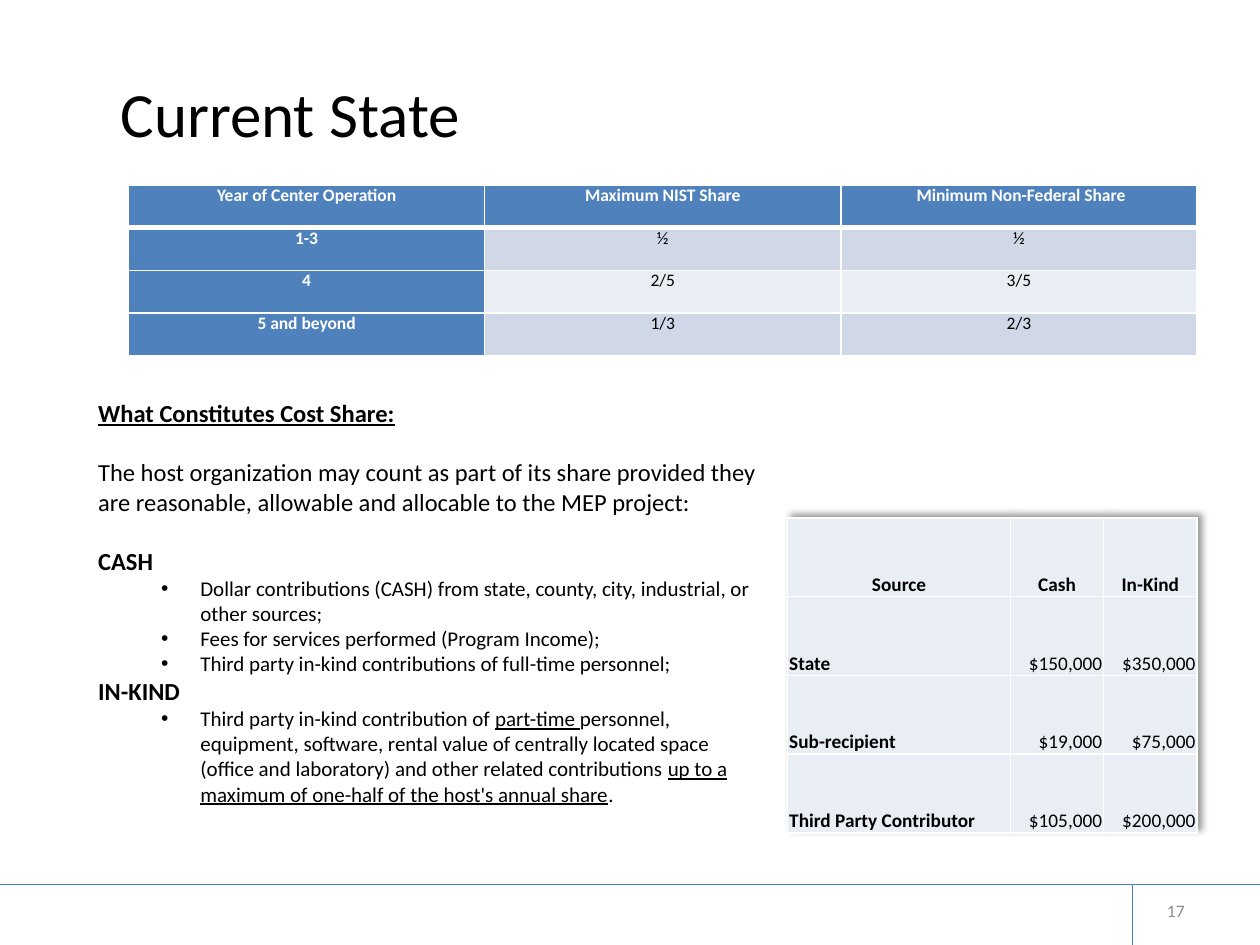
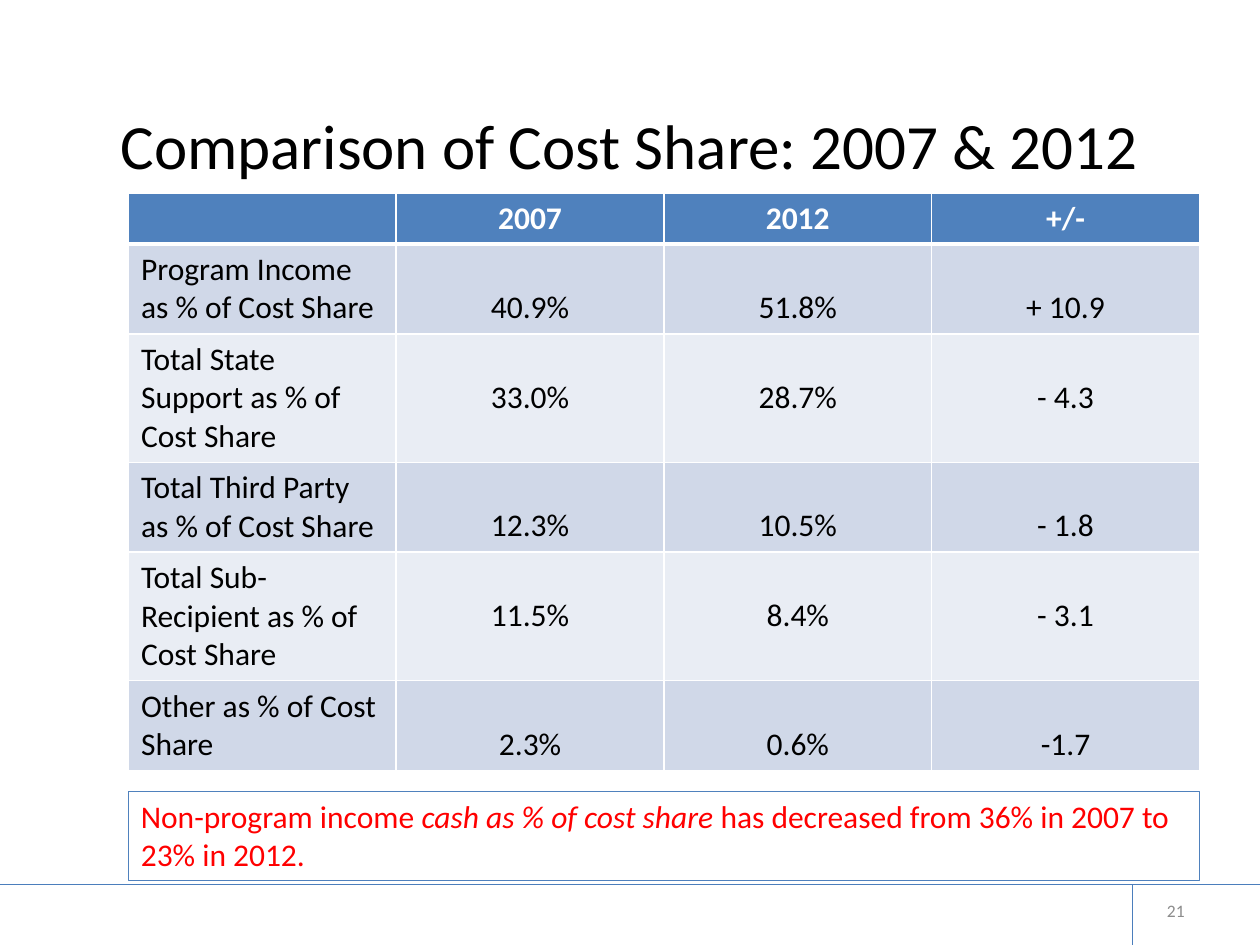
from collections import namedtuple
from dataclasses import dataclass

from lxml.etree import SubElement
from pptx import Presentation
from pptx.dml.color import RGBColor
from pptx.enum.shapes import MSO_CONNECTOR, MSO_SHAPE
from pptx.enum.text import MSO_ANCHOR, PP_ALIGN
from pptx.oxml import parse_xml
from pptx.oxml.ns import nsdecls, qn
from pptx.util import Cm, Pt

Box = namedtuple("Box", "left top width height")


@dataclass(frozen=True)
class Theme:
    """Colours and type sizes shared by the slides."""
    font: str = "Calibri"
    ink: str = "000000"
    paper: str = "FFFFFF"
    accent: str = "4F81BD"
    rule: str = "4B7EBC"
    band_dark: str = "D0D8E8"
    band_light: str = "E9EDF4"
    alert: str = "FF0000"
    muted: str = "8C8C8C"
    title: float = 36
    large: float = 18
    body: float = 14
    bullet: float = 12
    source: float = 11
    small: float = 10


THEME = Theme()
SLIDE = Box(0, 0, 25.4, 19.05)
FOOTER = Box(0, 17.83, SLIDE.width, SLIDE.height - 17.83)
LEFT, CENTER, RIGHT = PP_ALIGN.LEFT, PP_ALIGN.CENTER, PP_ALIGN.RIGHT

SHARE_RULES = [
    ["Year of Center Operation", "Maximum NIST Share", " Minimum Non-Federal Share"],
    ["1-3", "½", "½"],
    ["4", "2/5", "3/5"],
    ["5 and beyond", "1/3", "2/3"],
]
SOURCES = [
    ["Source", "Cash", "In-Kind"],
    ["State", "$150,000", "$350,000"],
    ["Sub-recipient", "$19,000", "$75,000"],
    ["Third Party Contributor", "$105,000", "$200,000"],
]
COMPARISON = [
    ["", "2007", "2012", "+/-"],
    ["Program Income as % of Cost Share", "40.9%", "51.8%", "+ 10.9"],
    ["Total State Support as % of Cost Share", "33.0%", "28.7%", "- 4.3"],
    ["Total Third Party as % of Cost Share", "12.3%", "10.5%", "- 1.8"],
    ["Total Sub-Recipient as % of Cost Share", "11.5%", "8.4%", "- 3.1"],
    ["Other as % of Cost Share", "2.3%", "0.6%", "-1.7"],
]
COMPARISON_LINES = [1, 2, 3, 2, 3, 2]

HEADING = {"size": Pt(THEME.body), "bold": True}
PLAIN = {"size": Pt(THEME.body)}
ITEM = {"size": Pt(THEME.bullet)}
UNDERLINED = {**ITEM, "underline": True}
COST_SHARE = [
    (0, False, [("What Constitutes Cost Share:", {**HEADING, "underline": True})]),
    (17, False, [("The host organization may count as part of its share provided they "
                  "are reasonable, allowable and allocable to the MEP project:", PLAIN)]),
    (17, False, [("CASH", HEADING)]),
    (0, True, [("Dollar contributions (CASH) from state, county, city, industrial, "
                "or other sources;", ITEM)]),
    (0, True, [("Fees for services performed (Program Income);", ITEM)]),
    (0, True, [("Third party in-kind contributions of full-time personnel;", ITEM)]),
    (0, False, [("IN-KIND", HEADING)]),
    (0, True, [("Third party in-kind contribution of ", ITEM),
               ("part-time ", UNDERLINED),
               ("personnel, equipment, software, rental value of centrally located space "
                "(office and laboratory) and other related contributions ", ITEM),
               ("up to a maximum of one-half of the host's annual share", UNDERLINED),
               (".", ITEM)]),
]
DECREASE = [("Non-program income ", {}),
            ("cash as % of cost share ", {"italic": True}),
            ("has decreased from 36% in 2007 to 23% in 2012.", {})]


def apply(target, values):
    """Set each named attribute of the target."""
    for name, value in values.items():
        setattr(target, name, value)


def lengths(box):
    """Turn a box in centimetres into slide lengths."""
    return [Cm(value) for value in box]


def write(paragraph, text, values, color=THEME.ink):
    """Append one formatted run to a paragraph."""
    run = paragraph.add_run()
    run.text = text
    apply(run.font, {"name": THEME.font, **values})
    run.font.color.rgb = RGBColor.from_string(color)


def add_text(slide, box, anchor=MSO_ANCHOR.TOP):
    """Add a wrapping text box and return its frame."""
    frame = slide.shapes.add_textbox(*lengths(box)).text_frame
    apply(frame, {"word_wrap": True, "vertical_anchor": anchor})
    return frame


def add_title(slide, box, text):
    """Write the slide title."""
    frame = add_text(slide, box, MSO_ANCHOR.MIDDLE)
    write(frame.paragraphs[0], text, {"size": Pt(THEME.title)})


def add_footer(slide, box, number):
    """Draw the footer rules and the slide number."""
    divider = box.left + 0.9 * box.width - 0.03
    right, bottom = box.left + box.width, box.top + box.height
    for ends in ((box.left, box.top, right, box.top), (divider, box.top, divider, bottom)):
        rule = slide.shapes.add_connector(MSO_CONNECTOR.STRAIGHT, *lengths(ends))
        rule.line.color.rgb = RGBColor.from_string(THEME.rule)
        rule.line.width = Pt(0.75)
        SubElement(rule._element.spPr, qn("a:effectLst"))
    number_box = Box(right - 7.19, box.top + 0.23, 5.92, 0.61)
    paragraph = add_text(slide, number_box, MSO_ANCHOR.MIDDLE).paragraphs[0]
    paragraph.alignment = RIGHT
    write(paragraph, str(number), {"size": Pt(THEME.small)}, THEME.muted)


def add_borders(cell, top, bottom):
    """Give a cell white borders, with top and bottom widths in points."""
    properties = cell._tc.get_or_add_tcPr()
    for place, (side, width) in enumerate(zip("LRTB", (1, 1, top, bottom))):
        properties.insert(place, parse_xml(
            f'<a:ln{side} {nsdecls("a")} w="{Pt(width)}"><a:solidFill>'
            f'<a:srgbClr val="{THEME.paper}"/></a:solidFill></a:ln{side}>'))


def add_grid(slide, box, rows, widths, heights, style, header_rule=3):
    """Add a table whose style(row, column) gives fill, ink, font, alignment and cell values."""
    table = slide.shapes.add_table(len(rows), len(widths), *lengths(box)).table
    for column, width in zip(table.columns, widths):
        column.width = Cm(width)
    for row, height in zip(table.rows, heights):
        row.height = Cm(height)
    for r, row in enumerate(rows):
        for c, text in enumerate(row):
            fill, ink, font, alignment, values = style(r, c)
            cell = table.cell(r, c)
            cell.fill.solid()
            cell.fill.fore_color.rgb = RGBColor.from_string(fill)
            apply(cell, values)
            add_borders(cell, header_rule if r == 1 else 1, header_rule if r == 0 else 1)
            paragraph = cell.text_frame.paragraphs[0]
            paragraph.alignment = alignment
            if text:
                write(paragraph, text, font, ink)
    return table


def band(row):
    """Return the alternating fill of a body row."""
    return THEME.band_dark if row % 2 else THEME.band_light


def share_rules_style(row, column):
    """Style the table of shares by year of operation."""
    heading = row == 0 or column == 0
    return (THEME.accent if heading else band(row), THEME.paper if heading else THEME.ink,
            {"size": Pt(THEME.small), "bold": heading}, CENTER,
            {"margin_left": Cm(0.18), "margin_right": Cm(0.18),
             "margin_top": 0, "margin_bottom": 0})


def sources_style(row, column):
    """Style the table of contribution sources."""
    alignment = CENTER if row == 0 else RIGHT if column else LEFT
    return (THEME.band_light, THEME.ink,
            {"size": Pt(THEME.source), "bold": row == 0 or column == 0}, alignment,
            {"margin_left": Cm(0.03), "margin_right": Cm(0.03), "margin_top": Cm(0.03),
             "margin_bottom": 0, "vertical_anchor": MSO_ANCHOR.BOTTOM})


def comparison_style(row, column):
    """Style the comparison table, with figures on the second line."""
    heading = row == 0
    return (THEME.accent if heading else band(row), THEME.paper if heading else THEME.ink,
            {"size": Pt(THEME.large), "bold": heading}, CENTER if heading or column else LEFT,
            {"margin_top": Cm(0.9 if row and column else 0.13)})


def add_share_rules(slide, box):
    """Add the table of shares by year of operation."""
    add_grid(slide, box, SHARE_RULES, [box.width / 3] * 3, [box.height / 4] * 4,
             share_rules_style)


def add_sources(slide, box):
    """Add the shadowed table of contribution sources."""
    amount = 1.88
    table = add_grid(slide, box, SOURCES, [box.width - 2 * amount, amount, amount],
                     [box.height / 4] * 4, sources_style, header_rule=1)
    apply(table, {"first_row": False, "horz_banding": False})
    table._tbl.tblPr.insert(0, parse_xml(
        f'<a:effectLst {nsdecls("a")}><a:outerShdw blurRad="50800" dist="38100" '
        'dir="18900000" algn="bl" rotWithShape="0"><a:prstClr val="black">'
        '<a:alpha val="40000"/></a:prstClr></a:outerShdw></a:effectLst>'))


def add_cost_share(slide, box):
    """Write what counts as cost share."""
    frame = add_text(slide, box)
    for index, (gap, bulleted, runs) in enumerate(COST_SHARE):
        paragraph = frame.add_paragraph() if index else frame.paragraphs[0]
        if gap:
            paragraph.space_before = Pt(gap)
        if bulleted:
            paragraph.level = 1
            properties = paragraph._p.get_or_add_pPr()
            properties.set("marL", str(Cm(2.06)))
            properties.set("indent", str(Cm(-0.79)))
            SubElement(properties, qn("a:buFont"), typeface="Arial")
            SubElement(properties, qn("a:buChar"), char="•")
        for text, values in runs:
            write(paragraph, text, values)


def add_comparison(slide, box):
    """Add the comparison table, each row as high as its label."""
    heights = [0.25 + 0.78 * lines for lines in COMPARISON_LINES]
    add_grid(slide, box, COMPARISON, [box.width / 4] * 4, heights, comparison_style)


def add_decrease_note(slide, box):
    """Add the outlined note on the decrease."""
    note = slide.shapes.add_shape(MSO_SHAPE.RECTANGLE, *lengths(box))
    note.shadow.inherit = False
    note.fill.background()
    note.line.color.rgb = RGBColor.from_string(THEME.accent)
    note.line.width = Pt(0.75)
    apply(note.text_frame, {"word_wrap": True, "vertical_anchor": MSO_ANCHOR.TOP})
    paragraph = note.text_frame.paragraphs[0]
    paragraph.alignment = LEFT
    for text, values in DECREASE:
        write(paragraph, text, {"size": Pt(THEME.large), **values}, THEME.alert)


def build_current_state(slide, box):
    """Build the slide on the current state."""
    add_footer(slide, FOOTER, 17)
    add_title(slide, Box(box.left + 2.18, box.top + 1.24, 21.95, 2.03), "Current State")
    add_share_rules(slide, Box(box.left + 2.59, box.top + 3.73, 21.54, 3.44))
    add_cost_share(slide, Box(box.left + 1.73, box.top + 7.9, 13.82, 9.14))
    add_sources(slide, Box(box.left + 15.88, box.top + 10.44, 8.25, 6.35))


def build_comparison(slide, box):
    """Build the slide comparing two years."""
    add_footer(slide, FOOTER, 21)
    add_comparison(slide, Box(box.left + 2.59, box.top + 3.89, 21.59, 11.59))
    add_title(slide, Box(box.left + 2.18, box.top + 1.9, 21.95, 2.03),
              "Comparison of Cost Share: 2007 & 2012")
    add_decrease_note(slide, Box(box.left + 2.59, box.top + 15.95, 21.59, 1.8))


def main():
    """Build and save the presentation."""
    deck = Presentation()
    apply(deck, {"slide_width": Cm(SLIDE.width), "slide_height": Cm(SLIDE.height)})
    for build in (build_current_state, build_comparison):
        build(deck.slides.add_slide(deck.slide_layouts[6]), SLIDE)
    deck.save("out.pptx")


if __name__ == "__main__":
    main()
